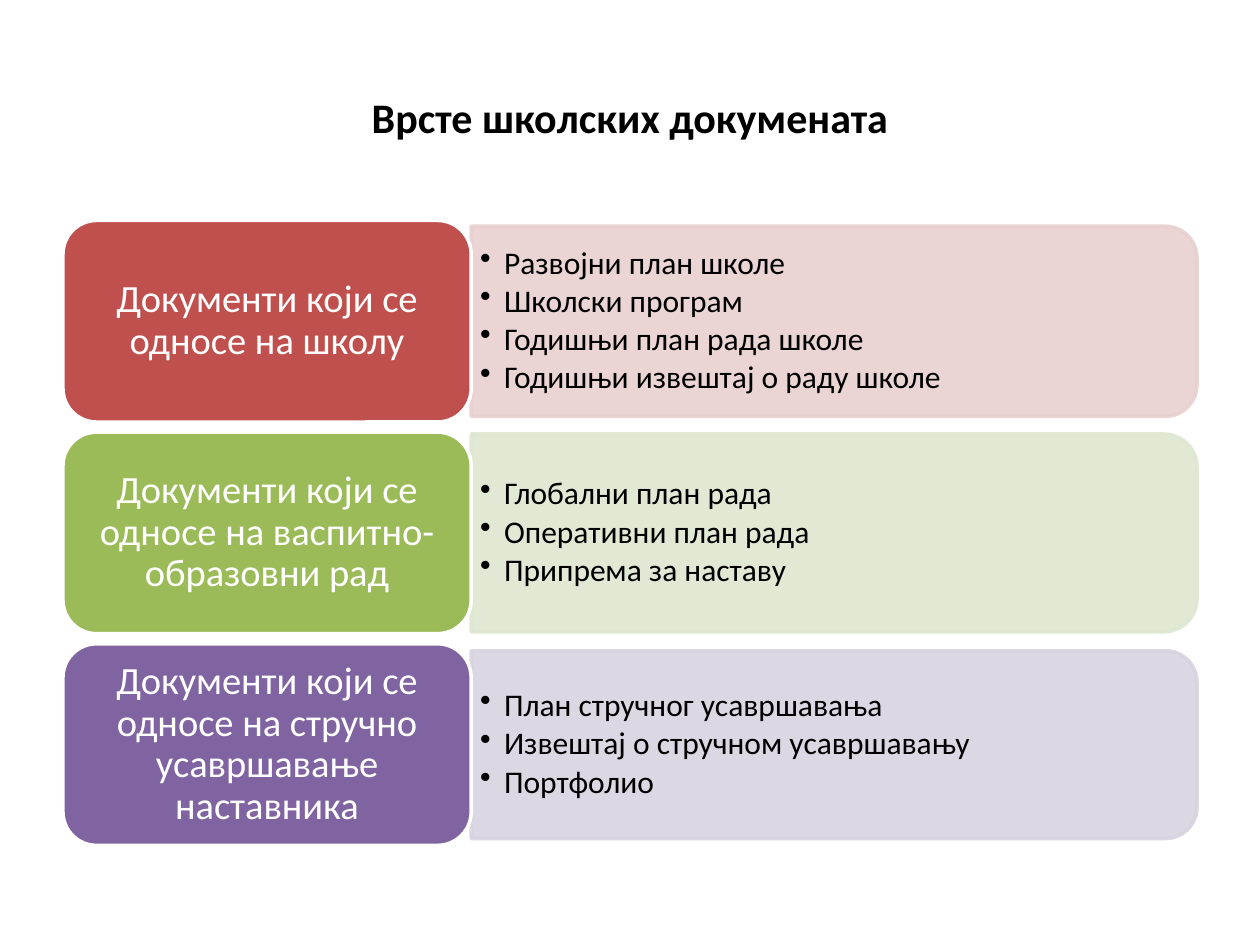
import pptx
import pptx.util
import pptx.dml.color
import pptx.enum.shapes
import pptx.enum.text
import pptx.oxml
import pptx.oxml.ns
from lxml import etree

Inches, Pt = pptx.util.Inches, pptx.util.Pt
SHAPES = pptx.enum.shapes.MSO_SHAPE
ALIGN = pptx.enum.text.PP_ALIGN
qn = pptx.oxml.ns.qn

COLOURS = {
    "black": "000000", "white": "FFFFFF",
    "red": "C0504D", "pale red": "E8D0D0",
    "green": "9BBB59", "pale green": "DEE7D1",
    "purple": "8064A2", "pale purple": "D8D3E0",
}

# Hue, height of the pale band, label, documents
GROUPS = [
    ("red", 1.51, "Документи који се односе на школу",
     ["Развојни план школе", "Школски програм", "Годишњи план рада школе",
      "Годишњи извештај о раду школе"]),
    ("green", 1.57, "Документи који се односе на васпитно-образовни рад",
     ["Глобални план рада", "Оперативни план рада", "Припрема за наставу"]),
    ("purple", 1.49, "Документи који се односе на стручно усавршавање наставника",
     ["План стручног усавршавања", "Извештај о стручном усавршавању",
      "Портфолио"]),
]
LEFT, TOP = 0.5, 1.75
LABEL_WIDTH, LABEL_HEIGHT = 3.24, 1.6
ROW_GAP = 0.08
BAND_LEFT, BAND_WIDTH = LEFT + LABEL_WIDTH, 5.76


class Slide:
    font = "Calibri"

    def __init__(self, deck):
        self.page = deck.slides.add_slide(deck.slide_layouts[5])

    def colour(self, name):
        return pptx.dml.color.RGBColor.from_string(COLOURS[name])

    def frame(self, box, inset_x, inset_y):
        frame = box.text_frame
        frame.word_wrap = True
        frame.vertical_anchor = pptx.enum.text.MSO_ANCHOR.MIDDLE
        frame.margin_left = frame.margin_right = Inches(inset_x)
        frame.margin_top = frame.margin_bottom = Inches(inset_y)
        return frame

    def add_span(self, para, text, size, colour, bold=False):
        span = para.add_run()
        span.text = text
        span.font.name = self.font
        span.font.size = Pt(size)
        span.font.bold = bold
        span.font.color.rgb = self.colour(colour)

    def title(self, text):
        box = self.page.shapes.title
        box.left, box.top = Inches(0.5), Inches(0.3)
        box.width, box.height = Inches(9), Inches(1.25)
        para = self.frame(box, 0.1, 0.05).paragraphs[0]
        para.alignment = ALIGN.CENTER
        self.add_span(para, text, 24, "black", bold=True)

    def shape(self, kind, left, top, width, height, fill, line):
        box = self.page.shapes.add_shape(
            kind, Inches(left), Inches(top), Inches(width), Inches(height))
        box.shadow.inherit = False
        box.fill.solid()
        box.fill.fore_color.rgb = self.colour(fill)
        box.line.color.rgb = self.colour(line)
        box.line.width = Pt(2)
        return box

    def band(self, middle, height, colour):
        # The preset rounds its top corners; a quarter turn moves them right
        box = self.shape(SHAPES.ROUND_2_SAME_RECTANGLE,
                         BAND_LEFT + (BAND_WIDTH - height) / 2,
                         middle - BAND_WIDTH / 2,
                         height, BAND_WIDTH, colour, colour)
        box.rotation = 90
        for tint in box._element.spPr.iter(qn("a:srgbClr")):
            etree.SubElement(tint, qn("a:alpha")).set("val", "90000")

    def bullets(self, middle, height, items):
        box = self.page.shapes.add_textbox(
            Inches(BAND_LEFT), Inches(middle - height / 2),
            Inches(BAND_WIDTH - 0.07), Inches(height))
        frame = self.frame(box, 0.07, 0.04)
        for index, item in enumerate(items):
            para = frame.add_paragraph() if index else frame.paragraphs[0]
            para.level = 1
            para.alignment = ALIGN.LEFT
            para.line_spacing = 0.9
            para.space_after = Pt(2.4)
            props = para._p.get_or_add_pPr()
            props.set("marL", str(Inches(0.19)))
            props.set("indent", str(-Inches(0.19)))
            etree.SubElement(props, qn("a:buChar")).set("char", "•")
            self.add_span(para, item, 18, "black")

    def label(self, top, text, colour):
        box = self.shape(SHAPES.ROUNDED_RECTANGLE, LEFT, top,
                         LABEL_WIDTH, LABEL_HEIGHT, colour, "white")
        para = self.frame(box, 0.09, 0.05).paragraphs[0]
        para.alignment = ALIGN.CENTER
        para.line_spacing = 0.9
        self.add_span(para, text, 22, "white")


def main():
    deck = pptx.Presentation()
    deck.slide_width, deck.slide_height = Inches(10), Inches(7.5)
    slide = Slide(deck)
    slide.title("Врсте школских докумената")

    # One row per group: pale band, its bullets, then the label on top
    for row, (hue, height, text, items) in enumerate(GROUPS):
        top = TOP + row * (LABEL_HEIGHT + ROW_GAP)
        middle = top + LABEL_HEIGHT / 2
        slide.band(middle, height, "pale " + hue)
        slide.bullets(middle, height - 0.15, items)
        slide.label(top, text, hue)

    deck.save("out.pptx")


if __name__ == "__main__":
    main()
